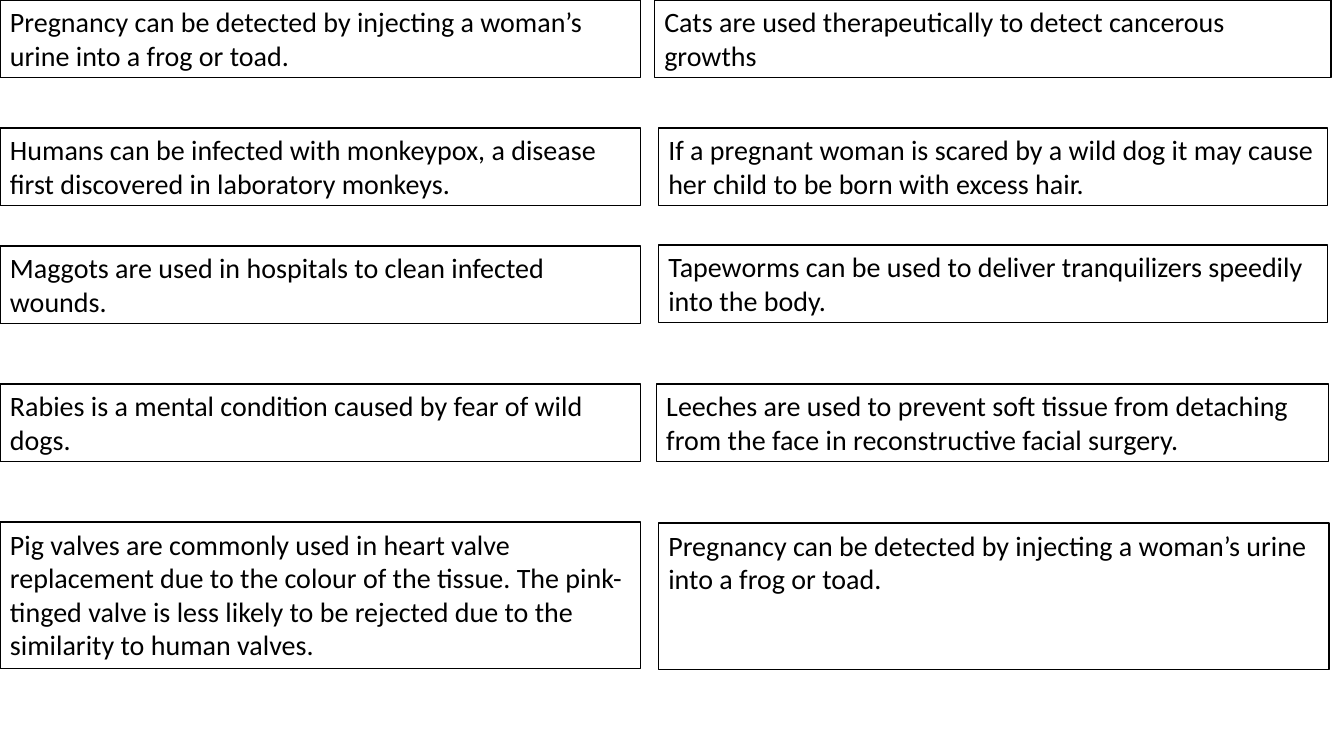
from pptx import Presentation
from pptx.dml.color import RGBColor
from pptx.enum.text import MSO_ANCHOR, PP_ALIGN
from pptx.enum.shapes import MSO_SHAPE
from pptx.util import Inches, Pt

BLACK = RGBColor(0, 0, 0)
WHITE = RGBColor(255, 255, 255)

deck = Presentation()
deck.slide_width, deck.slide_height = Inches(13.33), Inches(7.5)
page = deck.slides.add_slide(deck.slide_layouts[6])

# Two columns of statements: left edge, width, then (top, text) per row
LEFT_WIDTH = 6.35
SHORT, TALL = 0.77, 1.45
row_heights = [SHORT] * 4 + [TALL]
frog_test = "Pregnancy can be detected by injecting a woman’s urine into a frog or toad."

left_column = [
    (0, frog_test),
    (1.27, "Humans can be infected with monkeypox, a disease first discovered in laboratory monkeys."),
    (2.44, "Maggots are used in hospitals to clean infected wounds."),
    (3.81, "Rabies is a mental condition caused by fear of wild dogs."),
    (5.18, "Pig valves are commonly used in heart valve replacement due to the colour of the tissue. "
           "The pink-tinged valve is less likely to be rejected due to the similarity to human valves."),
]
right_column = [
    (6.49, 0, 6.71, "Cats are used therapeutically to detect cancerous growths"),
    (6.53, 1.27, 6.64, "If a pregnant woman is scared by a wild dog it may cause her child to be born with excess hair."),
    (6.53, 2.43, 6.64, "Tapeworms can be used to deliver tranquilizers speedily into the body."),
    (6.51, 3.81, 6.67, "Leeches are used to prevent soft tissue from detaching from the face in "
                       "reconstructive facial surgery."),
    (6.53, 5.19, 6.65, frog_test),
]
statements = [(0, top, LEFT_WIDTH, text) for top, text in left_column] + right_column

# Bordered statement boxes
for (left, top, width, text), height in zip(statements, row_heights * 2):
    box = page.shapes.add_shape(
        MSO_SHAPE.RECTANGLE, Inches(left), Inches(top), Inches(width), Inches(height))
    box.shadow.inherit = False
    box.fill.solid()
    box.fill.fore_color.rgb = WHITE
    box.line.color.rgb = BLACK
    box.line.width = Pt(1)

    frame = box.text_frame
    frame.word_wrap = True
    frame.vertical_anchor = MSO_ANCHOR.TOP
    frame.text = text
    para = frame.paragraphs[0]
    para.alignment = PP_ALIGN.LEFT
    para.font.name = "Calibri"
    para.font.size = Pt(20)
    para.font.color.rgb = BLACK

deck.save("out.pptx")
